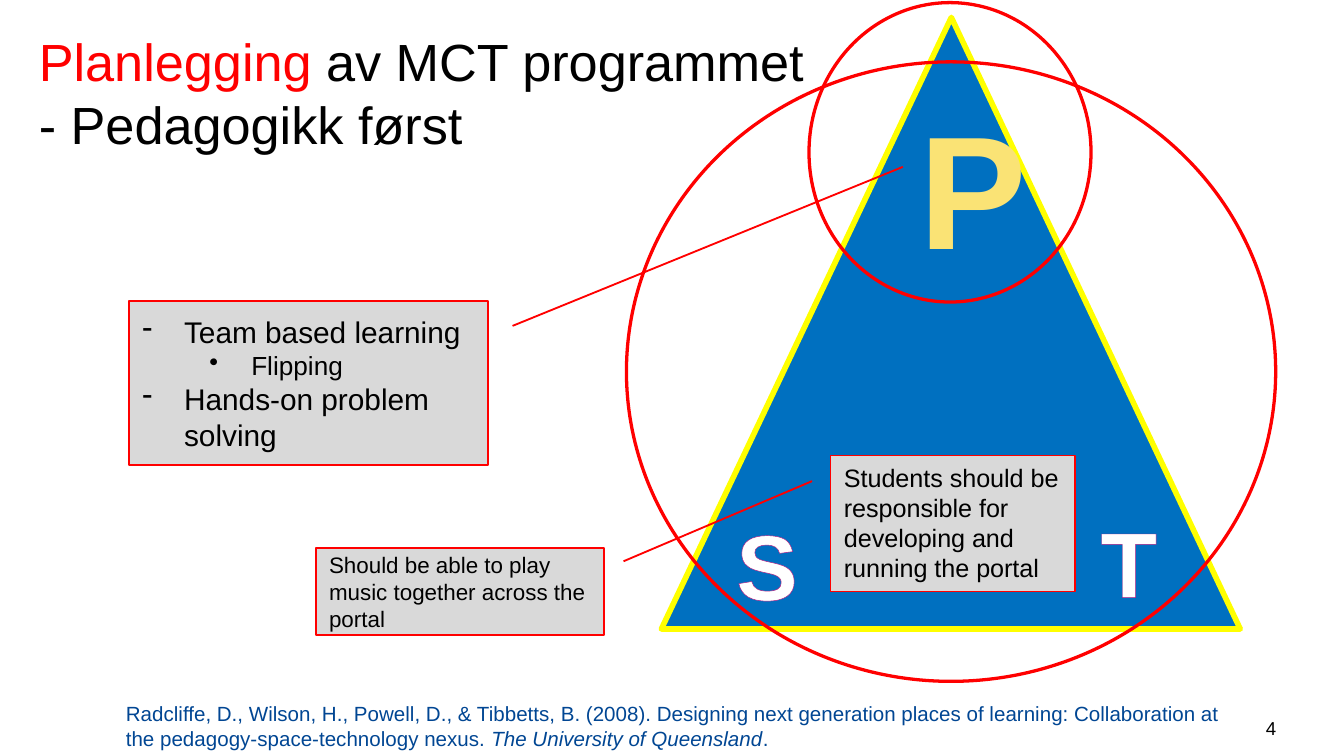
"""Build a slide on planning a programme with pedagogy first."""
from lxml import etree
from pptx import Presentation
from pptx.dml.color import RGBColor
from pptx.enum.shapes import MSO_SHAPE
from pptx.enum.text import MSO_ANCHOR, PP_ALIGN
from pptx.oxml.ns import qn
from pptx.util import Cm, Pt

RECT, OVAL, CALLOUT = MSO_SHAPE.RECTANGLE, MSO_SHAPE.OVAL, MSO_SHAPE.LINE_CALLOUT_1
TOP, MIDDLE = MSO_ANCHOR.TOP, MSO_ANCHOR.MIDDLE
LEFT, CENTER = PP_ALIGN.LEFT, PP_ALIGN.CENTER
FONT = "Arial"
COLORS = {
    "black": "000000", "white": "FFFFFF", "red": "FF0000", "blue": "0070C0",
    "yellow": "FFFF00", "cream": "FAE375", "plum": "B01B81", "grey": "D9D9D9",
    "navy": "014693",
}


def rgb(name):
    return RGBColor.from_string(COLORS[name])


def style(sp, fill=None, line=None, width=1):
    sp.shadow.inherit = False
    if fill:
        sp.fill.solid()
        sp.fill.fore_color.rgb = rgb(fill)
    else:
        sp.fill.background()
    if line:
        sp.line.color.rgb = rgb(line)
        sp.line.width = Pt(width)
    else:
        sp.line.fill.background()


def add_run(p, text, size, color="black", bold=None, italic=None):
    r = p.add_run()
    r.text = text
    r.font.name = FONT
    r.font.size = Pt(size)
    r.font.color.rgb = rgb(color)
    r.font.bold = bold
    r.font.italic = italic
    return r


def set_frame(sp, anchor=TOP, align=LEFT, wrap=True):
    tf = sp.text_frame
    tf.word_wrap = wrap
    tf.vertical_anchor = anchor
    tf.paragraphs[0].alignment = align
    return tf


def add_shape(shapes, kind, box, fill=None, line=None, width=1):
    sp = shapes.add_shape(kind, *map(Cm, box))
    style(sp, fill, line, width)
    return sp


def add_text(shapes, box, runs, anchor=TOP, align=LEFT):
    sp = shapes.add_textbox(*map(Cm, box))
    p = set_frame(sp, anchor, align).paragraphs[0]
    for run in runs:
        add_run(p, *run)


def add_callout(shapes, box, adjustments):
    sp = add_shape(shapes, CALLOUT, box, "grey", "red")
    for i, value in enumerate(adjustments):
        sp.adjustments[i] = value
    return set_frame(sp, MIDDLE)


def add_bullets(tf, items):
    for i, (text, level, bullet, indent, size) in enumerate(items):
        p = tf.add_paragraph() if i else tf.paragraphs[0]
        p.alignment = LEFT
        p.level = level
        pPr = p._p.get_or_add_pPr()
        pPr.set("marL", str(Cm(indent)))
        pPr.set("indent", str(-Cm(0.79)))
        etree.SubElement(pPr, qn("a:buChar")).set("char", bullet)
        add_run(p, text, size)


def add_letter(sp, letter, size, color, wrap):
    tf = set_frame(sp, align=CENTER, wrap=wrap)
    tf.margin_left = tf.margin_right = Cm(0.18)
    tf.margin_top = tf.margin_bottom = Cm(0.1)
    r = add_run(tf.paragraphs[0], letter, size, color, True)
    ln = etree.Element(qn("a:ln"), w=str(Pt(1)))
    fill = etree.SubElement(ln, qn("a:solidFill"))
    etree.SubElement(fill, qn("a:srgbClr")).set("val", COLORS["plum"])
    r.font._element.insert(0, ln)


def add_triangle(slide):
    shapes = slide.shapes.add_group_shape().shapes
    builder = shapes.build_freeform(Cm(12.5), Cm(11.89))
    builder.add_line_segments([(Cm(17.98), Cm(0.33)), (Cm(23.44), Cm(11.89))])
    style(builder.convert_to_shape(), "blue", "yellow", 3)
    pedagogy = shapes.add_textbox(Cm(17.2), Cm(1.57), Cm(1.68), Cm(3.89))
    add_letter(pedagogy, "P", 86.2, "cream", True)
    for letter, box in (("T", (20.6, 9.45, 1.47, 2.31)), ("S", (13.72, 9.5, 1.55, 2.31))):
        add_letter(add_shape(shapes, RECT, box, "blue"), letter, 49.5, "white", False)


def add_title(slide):
    sp = slide.shapes.title
    sp.left, sp.top, sp.width, sp.height = map(Cm, (0.48, 0.43, 15.24, 2.64))
    tf = set_frame(sp)
    add_run(tf.paragraphs[0], "Planlegging ", 28, "red")
    add_run(tf.paragraphs[0], "av MCT programmet", 28)
    p = tf.add_paragraph()
    p.alignment = LEFT
    add_run(p, "- Pedagogikk først", 28)


def main():
    prs = Presentation()
    prs.slide_width, prs.slide_height = Cm(25.4), Cm(14.29)
    s = prs.slides.add_slide(prs.slide_layouts[5])
    shapes = s.shapes
    add_title(s)
    add_text(shapes, (23.55, 13.39, 0.94, 0.76), [("4", 10)], MIDDLE, CENTER)
    add_triangle(s)
    add_shape(shapes, OVAL, (15.29, 0.05, 5.33, 5.66), line="red", width=1.75)
    methods = add_callout(shapes, (2.44, 5.69, 6.78, 3.1), (0.152, 1.069, -0.818, 2.157))
    add_bullets(methods, [
        ("Team based learning", 0, "-", 0.79, 16),
        ("Flipping", 1, "•", 2.06, 14),
        ("Hands-on problem solving", 0, "-", 0.79, 16),
    ])
    add_shape(shapes, OVAL, (11.84, 1.17, 12.27, 11.71), line="red", width=1.75)
    students = add_shape(shapes, RECT, (15.7, 8.61, 4.62, 2.57), "grey", "red", 0.75)
    add_run(set_frame(students).paragraphs[0],
            "Students should be responsible for developing and running the portal", 13.5)
    music = add_callout(shapes, (5.97, 10.36, 5.44, 1.65), (0.152, 1.069, -0.767, 1.724))
    add_run(music.paragraphs[0], "Should be able to play music together across the portal", 12)
    add_text(shapes, (2.13, 13.13, 21.56, 1.19), [
        ("Radcliffe, D., Wilson, H., Powell, D., & Tibbetts, B. (2008). Designing next "
         "generation places of learning: Collaboration at the pedagogy-space-technology "
         "nexus. ", 11, "navy"),
        ("The University of Queensland", 11, "navy", None, True),
        (".", 11, "navy"),
    ])
    prs.save("out.pptx")


if __name__ == "__main__":
    main()
